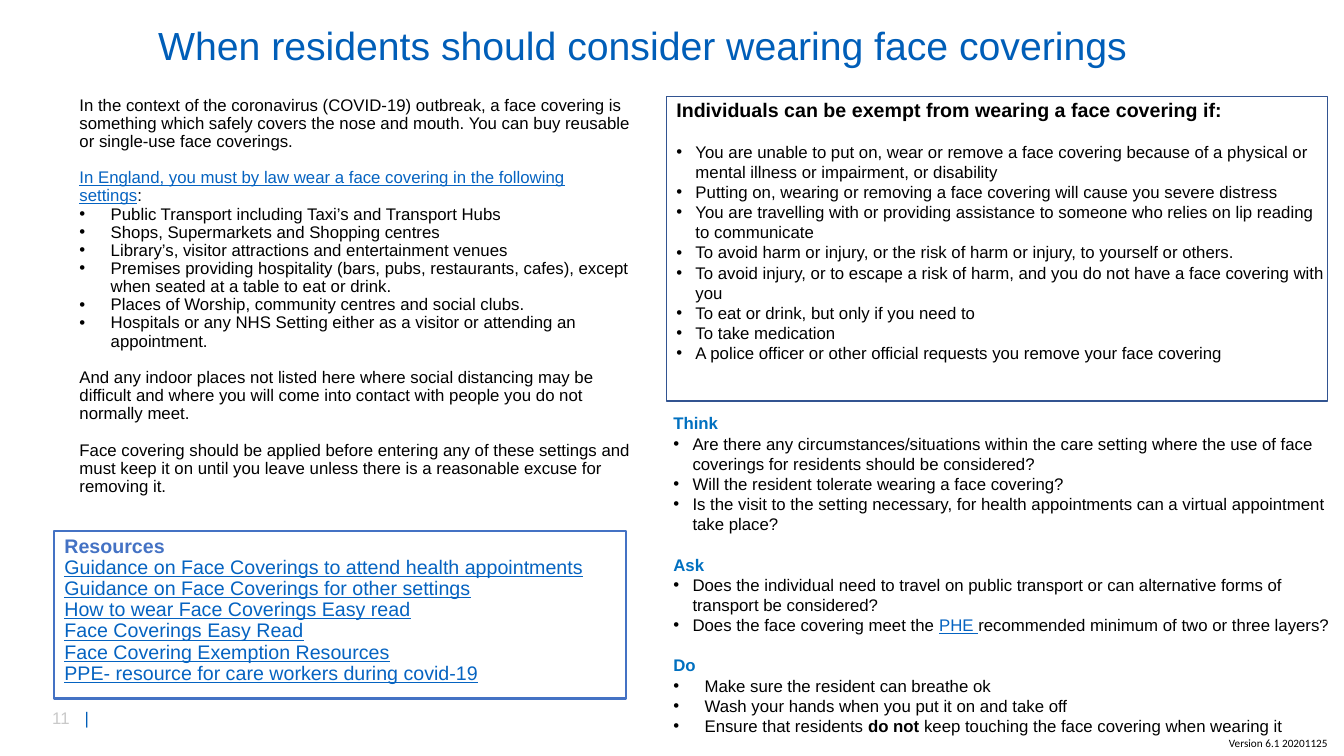
from dataclasses import dataclass

import lxml.etree
import pptx
import pptx.dml.color
import pptx.enum.shapes
import pptx.oxml.ns
import pptx.util

PX = 9144  # 100 px to the inch
BLACK, TITLE_BLUE, HEADING_BLUE = "000000", "005EB8", "0070C0"
LINK_BLUE, RESOURCE_BLUE, FRAME_BLUE, GREY = "0563C1", "4472C4", "325491", "C9C9C9"
NARROW, WIDE = 19, 31  # hanging indents


@dataclass
class Span:
    text: str
    color: str | None = None
    bold: bool | None = None
    underline: bool | None = None


@dataclass
class Line:
    spans: list[Span]
    size: int = 12
    color: str = BLACK
    bold: bool = False
    underline: bool = False
    indent: int = 0
    gap: float = 0
    tab: int = 0
    font: str = "Arial"


@dataclass
class Box:
    left: int
    top: int
    width: int
    height: int
    lines: list[Line]
    spacing: float = 1.0
    frame: str | None = None
    frame_width: float = 1
    wrap: bool = True


def rgb(color: str) -> pptx.dml.color.RGBColor:
    return pptx.dml.color.RGBColor.from_string(color)


def text(words: str, gap: float = 0) -> Line:
    return Line([Span(words)], gap=gap)


def heading(words: str, gap: float = 0) -> Line:
    return Line([Span(words)], color=HEADING_BLUE, bold=True, gap=gap)


def bullets(indent: int, *items: str) -> list[Line]:
    return [Line([Span(item)], indent=indent) for item in items]


def add_list_element(properties, tag: str, **attributes: str):
    return lxml.etree.SubElement(properties, pptx.oxml.ns.qn(tag), attributes)


def write_line(paragraph, line: Line, spacing: float) -> None:
    paragraph.line_spacing = spacing
    if line.gap:
        paragraph.space_before = pptx.util.Pt(line.gap)
    properties = paragraph._p.get_or_add_pPr()
    if line.indent:
        properties.set("marL", str(line.indent * PX))
        properties.set("indent", str(-line.indent * PX))
        add_list_element(properties, "a:buFont", typeface="Arial")
        add_list_element(properties, "a:buChar", char="•")
    if line.tab:
        tabs = add_list_element(properties, "a:tabLst")
        add_list_element(tabs, "a:tab", pos=str(line.tab * PX), algn="l")
    font = paragraph.font
    font.name, font.size = line.font, pptx.util.Pt(line.size)
    font.bold, font.underline = line.bold, line.underline
    font.color.rgb = rgb(line.color)
    for span in line.spans:
        run = paragraph.add_run()
        run.text = span.text
        if span.color:
            run.font.color.rgb = rgb(span.color)
        if span.bold is not None:
            run.font.bold = span.bold
        if span.underline is not None:
            run.font.underline = span.underline


def add_box(slide, box: Box) -> None:
    place = [value * PX for value in (box.left, box.top, box.width, box.height)]
    shape = slide.shapes.add_textbox(*place)
    if box.frame:
        shape.line.color.rgb = rgb(box.frame)
        shape.line.width = pptx.util.Pt(box.frame_width)
    frame = shape.text_frame
    frame.word_wrap = box.wrap
    for index, line in enumerate(box.lines):
        paragraph = frame.add_paragraph() if index else frame.paragraphs[0]
        write_line(paragraph, line, box.spacing)


def add_exemption_frame(slide) -> None:
    shape = slide.shapes.add_shape(
        pptx.enum.shapes.MSO_SHAPE.RECTANGLE, 661 * PX, 96 * PX, 656 * PX, 302 * PX
    )
    shape.shadow.inherit = False
    shape.fill.background()
    shape.line.color.rgb = rgb(FRAME_BLUE)
    shape.line.width = pptx.util.Pt(1)


LEFT_GAP, RIGHT_GAP = 13, 14.4  # one text line in each column

title = Box(147, 22, 1106, 67, [
    Line([Span("When residents should consider wearing face coverings")], size=28, color=TITLE_BLUE),
], spacing=0.9)

settings = Box(69, 91, 567, 615, [
    text("In the context of the coronavirus (COVID-19) outbreak, a face covering is something which "
         "safely covers the nose and mouth. You can buy reusable or single-use face coverings."),
    Line([
        Span("In England, you must by law wear a face covering in the following settings",
             LINK_BLUE, underline=True),
        Span(":"),
    ], gap=LEFT_GAP),
    *bullets(
        WIDE,
        "Public Transport including Taxi’s and Transport Hubs",
        "Shops, Supermarkets and Shopping centres",
        "Library’s, visitor attractions and entertainment venues",
        "Premises providing hospitality (bars, pubs, restaurants, cafes), except when seated at a "
        "table to eat or drink.",
        "Places of Worship, community centres and social clubs.",
        "Hospitals or any NHS Setting either as a visitor or attending an appointment.",
    ),
    text("And any indoor places not listed here where social distancing may be difficult and where "
         "you will come into contact with people you do not normally meet.", LEFT_GAP),
    text("Face covering should be applied before entering any of these settings and must keep it on "
         "until you leave unless there is a reasonable excuse for removing it.", LEFT_GAP),
], spacing=0.9)

advice = Box(658, 405, 685, 333, [
    heading("Think"),
    *bullets(
        NARROW,
        "Are there any circumstances/situations within the care setting where the use of face "
        "coverings for residents should be considered?",
        "Will the resident tolerate wearing a face covering?",
        "Is the visit to the setting necessary, for health appointments can a virtual appointment "
        "take place?",
    ),
    heading("Ask", RIGHT_GAP),
    *bullets(
        NARROW,
        "Does the individual need to travel on public transport or can alternative forms of "
        "transport be considered?",
    ),
    Line([
        Span("Does the face covering meet the "),
        Span("PHE ", LINK_BLUE, underline=True),
        Span("recommended minimum of two or three layers?"),
    ], indent=NARROW),
    heading("Do", RIGHT_GAP),
    *bullets(
        WIDE,
        "Make sure the resident can breathe ok",
        "Wash your hands when you put it on and take off",
    ),
    Line([
        Span("Ensure that residents "),
        Span("do not ", bold=True),
        Span("keep touching the face covering when wearing it"),
    ], indent=WIDE),
])

resource_titles = [
    "Guidance on Face Coverings to attend health appointments",
    "Guidance on Face Coverings for other settings",
    "How to wear Face Coverings Easy read",
    "Face Coverings Easy Read",
    "Face Covering Exemption Resources",
    "PPE- resource for care workers during covid-19",
]
resources = Box(54, 527, 567, 166, [
    Line([Span("Resources")], size=14, color=RESOURCE_BLUE, bold=True),
    *[Line([Span(name)], size=14, color=LINK_BLUE, underline=True) for name in resource_titles],
], spacing=0.9, frame=RESOURCE_BLUE, frame_width=1.5)

exemption_items = bullets(
    NARROW,
    "You are unable to put on, wear or remove a face covering because of a physical or mental "
    "illness or impairment, or disability",
    "Putting on, wearing or removing a face covering will cause you severe distress",
    "You are travelling with or providing assistance to someone who relies on lip reading to communicate",
    "To avoid harm or injury, or the risk of harm or injury, to yourself or others.",
    "To avoid injury, or to escape a risk of harm, and you do not have a face covering with you",
    "To eat or drink, but only if you need to",
    "To take medication",
    "A police officer or other official requests you remove your face covering",
)
exemption_items[0].gap = RIGHT_GAP
exemptions = Box(661, 92, 667, 306, [
    Line([Span("Individuals can be exempt from wearing a face covering if:")], size=14, bold=True),
    *exemption_items,
])

page_number = Box(42, 697, 94, 30, [Line([Span("11\t"), Span("|", TITLE_BLUE)], color=GREY, tab=32)])
version = Box(1209, 726, 119, 24, [Line([Span("Version 6.1 20201125")], size=8, font="Calibri")], wrap=False)


def main() -> None:
    presentation = pptx.Presentation()
    presentation.slide_width, presentation.slide_height = 1333 * PX, 750 * PX
    slide = presentation.slides.add_slide(presentation.slide_layouts[6])
    add_exemption_frame(slide)
    for box in (page_number, title, settings, advice, resources, version, exemptions):
        add_box(slide, box)
    presentation.save("out.pptx")


if __name__ == "__main__":
    main()
